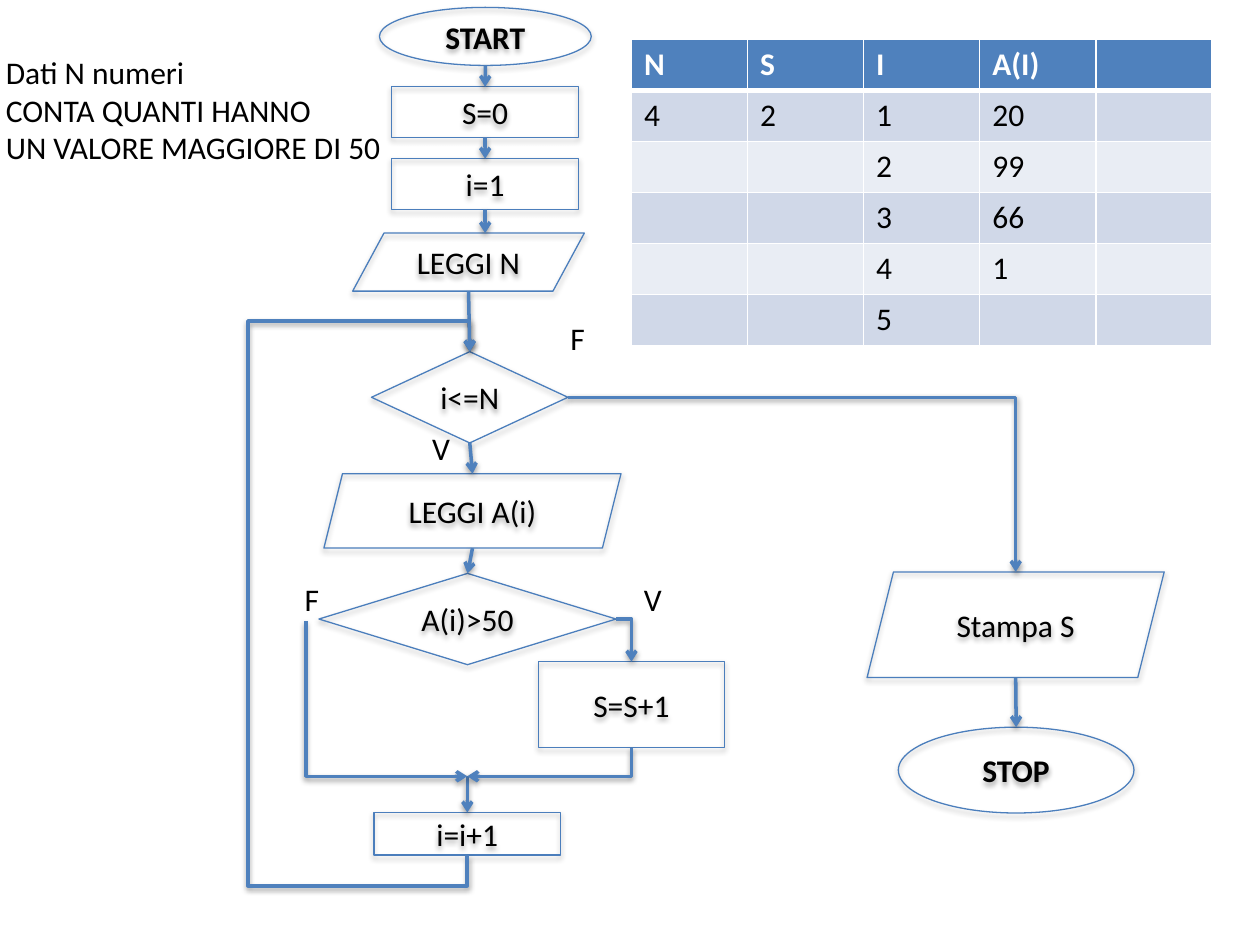
from dataclasses import dataclass

from lxml.etree import SubElement
from pptx import Presentation
from pptx.dml.color import RGBColor
from pptx.enum.shapes import MSO_CONNECTOR, MSO_SHAPE
from pptx.enum.text import MSO_ANCHOR, MSO_AUTO_SIZE, PP_ALIGN
from pptx.oxml import parse_xml
from pptx.oxml.ns import nsdecls, qn
from pptx.util import Cm, Pt

BLACK = RGBColor(0x00, 0x00, 0x00)
WHITE = RGBColor(0xFF, 0xFF, 0xFF)
BLUE = RGBColor(0x4F, 0x81, 0xBD)
OUTLINE = RGBColor(0x4B, 0x7E, 0xBC)
BAND_DARK = RGBColor(0xD0, 0xD8, 0xE8)
BAND_LIGHT = RGBColor(0xE9, 0xED, 0xF4)

FONT = {"name": "Calibri", "size": Pt(18), "bold": False}
NODE_FRAME = {"vertical_anchor": MSO_ANCHOR.MIDDLE, "word_wrap": True}
LABEL_FRAME = {"word_wrap": False, "auto_size": MSO_AUTO_SIZE.SHAPE_TO_FIT_TEXT}

Point = tuple[float, float]


@dataclass(frozen=True)
class Node:
    text: str
    kind: MSO_SHAPE
    x: float
    y: float
    w: float
    h: float
    bold: bool = False
    adj: float | None = None

    @property
    def top(self) -> Point:
        return self.x + self.w / 2, self.y

    @property
    def bottom(self) -> Point:
        return self.x + self.w / 2, self.y + self.h

    @property
    def right(self) -> Point:
        return self.x + self.w, self.y + self.h / 2


@dataclass(frozen=True)
class Label:
    text: str
    x: float
    y: float
    w: float = 0.85
    h: float = 1.02


START = Node("START", MSO_SHAPE.OVAL, 7.65, 0.15, 4.27, 1.17, bold=True)
STOP = Node("STOP", MSO_SHAPE.OVAL, 18.11, 14.66, 4.75, 1.73, bold=True)
INIT_S = Node("S=0", MSO_SHAPE.RECTANGLE, 7.9, 1.75, 3.76, 1.02)
INIT_I = Node("i=1", MSO_SHAPE.RECTANGLE, 7.9, 3.2, 3.76, 1.02)
READ_N = Node("LEGGI N", MSO_SHAPE.PARALLELOGRAM, 7.11, 4.7, 4.67, 1.17, adj=0.54)
LOOP_TEST = Node("i<=N", MSO_SHAPE.DIAMOND, 7.49, 7.09, 3.96, 1.84)
READ_A = Node("LEGGI A(i)", MSO_SHAPE.PARALLELOGRAM, 6.53, 9.55, 5.99, 1.5)
VALUE_TEST = Node("A(i)>50", MSO_SHAPE.DIAMOND, 6.43, 11.56, 5.99, 1.84)
COUNT = Node("S=S+1", MSO_SHAPE.RECTANGLE, 10.85, 13.34, 3.76, 1.73)
NEXT_I = Node("i=i+1", MSO_SHAPE.RECTANGLE, 7.54, 16.38, 3.76, 0.86)
PRINT_S = Node("Stampa S", MSO_SHAPE.PARALLELOGRAM, 17.48, 11.53, 5.99, 2.13)
NODES = [START, STOP, INIT_S, INIT_I, READ_N, LOOP_TEST, READ_A, VALUE_TEST,
         COUNT, NEXT_I, PRINT_S]

LABELS = [
    Label("Dati N numeri\nCONTA QUANTI HANNO\nUN VALORE MAGGIORE DI 50",
          -0.13, 0.94, 8.15, 2.57),
    Label("F", 5.89, 11.56, 0.81),
    Label("V", 12.73, 11.56),
    Label("V", 8.46, 8.53),
    Label("F", 11.25, 6.3, 0.81),
]

JOIN = (9.42, 15.65)
ARROWS = [
    (START.bottom, INIT_S.top),
    (INIT_S.bottom, INIT_I.top),
    (INIT_I.bottom, (INIT_I.bottom[0], READ_N.y)),
    (READ_N.bottom, LOOP_TEST.top),
    (LOOP_TEST.bottom, READ_A.top),
    (READ_A.bottom, VALUE_TEST.top),
    (JOIN, NEXT_I.top),
    (PRINT_S.bottom, STOP.top),
]
LOOP_X = 5.0
LOOP_MARGIN = 0.62

ROWS = [
    ("N", "S", "I", "A(I)", ""),
    ("4", "2", "1", "20", ""),
    ("", "", "2", "99", ""),
    ("", "", "3", "66", ""),
    ("", "", "4", "1", ""),
    ("", "", "5", "", ""),
]


def apply(target, values: dict) -> None:
    for name, value in values.items():
        setattr(target, name, value)


def write(tf, text: str, color: RGBColor = BLACK, bold: bool = False,
          align: PP_ALIGN = PP_ALIGN.LEFT) -> None:
    tf.text = text
    for p in tf.paragraphs:
        p.alignment = align
        apply(p.font, FONT | {"bold": bold})
        p.font.color.rgb = color
        for r in p.runs:
            apply(r.font, FONT | {"bold": bold})
            r.font.color.rgb = color


def add_shadow(sp, dist: int, alpha: int) -> None:
    sp._element.spPr.append(parse_xml(
        f'<a:effectLst {nsdecls("a")}><a:outerShdw blurRad="40000" dist="{dist}" '
        f'dir="5400000" rotWithShape="0"><a:srgbClr val="000000">'
        f'<a:alpha val="{alpha}"/></a:srgbClr></a:outerShdw></a:effectLst>'))


def add_node(s, node: Node) -> None:
    sp = s.shapes.add_shape(node.kind, Cm(node.x), Cm(node.y), Cm(node.w), Cm(node.h))
    if node.adj is not None:
        sp.adjustments[0] = node.adj
    sp.fill.background()
    sp.line.color.rgb = OUTLINE
    sp.line.width = Pt(0.75)
    add_shadow(sp, 23000, 35000)
    apply(sp.text_frame, NODE_FRAME)
    write(sp.text_frame, node.text, bold=node.bold, align=PP_ALIGN.CENTER)


def add_label(s, label: Label) -> None:
    sp = s.shapes.add_textbox(Cm(label.x), Cm(label.y), Cm(label.w), Cm(label.h))
    apply(sp.text_frame, LABEL_FRAME)
    write(sp.text_frame, label.text)


def add_arrow(s, start: Point, end: Point, kind: MSO_CONNECTOR = MSO_CONNECTOR.STRAIGHT):
    cxn = s.shapes.add_connector(kind, *(Cm(v) for v in (*start, *end)))
    cxn.line.color.rgb = BLUE
    cxn.line.width = Pt(2)
    SubElement(cxn.line._get_or_add_ln(), qn("a:tailEnd"), type="arrow")
    add_shadow(cxn, 20000, 38000)
    return cxn


def add_elbow(s, start: Point, end: Point, preset: str = "bentConnector2",
              turned: bool = False, adjs: tuple[float, ...] = ()) -> None:
    if turned:
        dx, dy = end[0] - start[0], end[1] - start[1]
        cx, cy = (start[0] + end[0]) / 2, (start[1] + end[1]) / 2
        start, end = (cx - dy / 2, cy + dx / 2), (cx + dy / 2, cy - dx / 2)
    cxn = add_arrow(s, start, end, MSO_CONNECTOR.ELBOW)
    spPr = cxn._element.spPr
    if turned:
        spPr.find(qn("a:xfrm")).set("rot", "5400000")
    geom = spPr.find(qn("a:prstGeom"))
    geom.set("prst", preset)
    guides = geom.find(qn("a:avLst"))
    for i, adj in enumerate(adjs, 1):
        SubElement(guides, qn("a:gd"), name=f"adj{i}", fmla=f"val {round(adj * 100000)}")


def add_loop(s, start: Point, end: Point) -> None:
    margin = LOOP_MARGIN / abs(end[1] - start[1])
    side = (LOOP_X - start[0]) / (end[0] - start[0])
    add_elbow(s, start, end, "bentConnector5", True, (-margin, side, 1 + margin))


def add_borders(cell, top: float, bottom: float) -> None:
    tcPr = cell._tc.get_or_add_tcPr()
    for i, (side, width) in enumerate((("L", 1), ("R", 1), ("T", top), ("B", bottom))):
        tcPr.insert(i, parse_xml(
            f'<a:ln{side} {nsdecls("a")} w="{Pt(width)}"><a:solidFill>'
            f'<a:srgbClr val="{WHITE}"/></a:solidFill></a:ln{side}>'))


def add_trace_table(s) -> None:
    table = s.shapes.add_table(len(ROWS), len(ROWS[0]), Cm(12.73), Cm(0.79),
                               Cm(11.7), Cm(6.18)).table
    for i, row in enumerate(ROWS):
        table.rows[i].height = Cm(1.03)
        header = i == 0
        fill = BLUE if header else BAND_DARK if i % 2 else BAND_LIGHT
        for j, text in enumerate(row):
            cell = table.cell(i, j)
            write(cell.text_frame, text, WHITE if header else BLACK, header)
            cell.fill.solid()
            cell.fill.fore_color.rgb = fill
            add_borders(cell, 3 if i == 1 else 1, 3 if header else 1)


def main() -> None:
    prs = Presentation()
    prs.slide_width, prs.slide_height = Cm(25.4), Cm(19.05)
    s = prs.slides.add_slide(prs.slide_layouts[6])
    for node in NODES:
        add_node(s, node)
    for label in LABELS:
        add_label(s, label)
    for start, end in ARROWS:
        add_arrow(s, start, end)
    add_elbow(s, VALUE_TEST.right, COUNT.top)
    add_elbow(s, LOOP_TEST.right, PRINT_S.top)
    add_elbow(s, COUNT.bottom, JOIN, turned=True)
    add_elbow(s, (6.17, 12.52), JOIN, "bentConnector3", adjs=(0,))
    add_loop(s, NEXT_I.bottom, LOOP_TEST.top)
    add_trace_table(s)
    prs.save("out.pptx")


if __name__ == "__main__":
    main()
